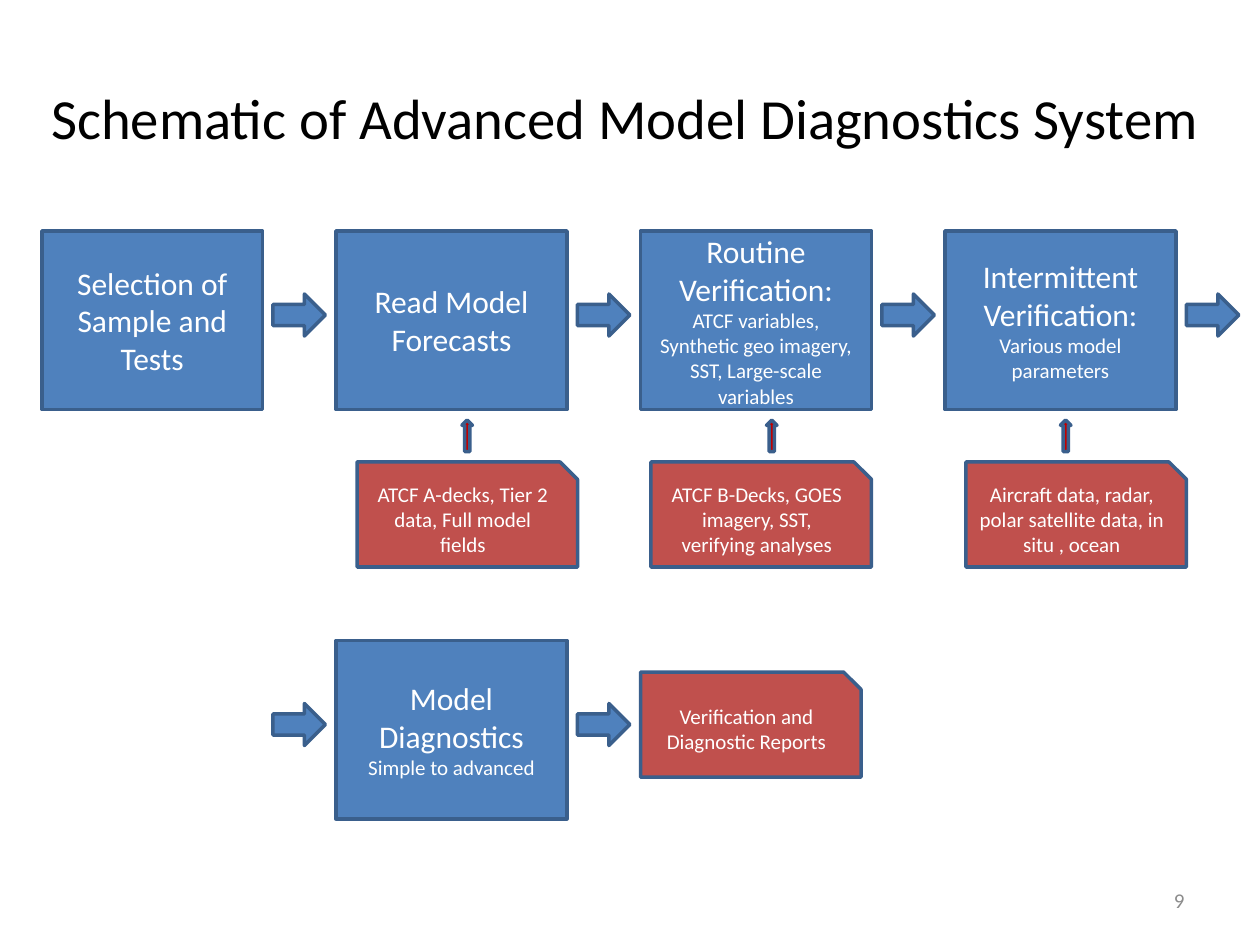
import pptx
import pptx.util
import pptx.dml.color
import pptx.enum.shapes
import pptx.enum.text

# Content: each block is a list of (text, point size) paragraphs
TITLE = "Schematic of Advanced Model Diagnostics System"
PAGE = "9"
START = [("Selection of Sample and Tests", 18)]
STEPS = [  # column, row, paragraphs
    (0, 0, [("Read Model Forecasts", 18)]),
    (1, 0, [("Routine Verification:", 18),
            ("ATCF variables, Synthetic geo imagery, SST, Large-scale variables", 12)]),
    (2, 0, [("Intermittent Verification:", 18), ("Various model parameters", 12)]),
    (0, 1, [("Model Diagnostics", 18), ("Simple to advanced", 12)]),
]
INPUTS = [  # card left, up arrow left, text
    (272, 352, "ATCF A-decks, Tier 2 data, Full model fields"),
    (496, 584, "ATCF B-Decks, GOES imagery, SST, verifying analyses"),
    (736, 808, "Aircraft data, radar, polar satellite data, in situ , ocean"),
]
REPORT = "Verification and Diagnostic Reports"
FLOWS = [(0, 0), (1, 0), (2, 0), (3, 0), (0, 1), (1, 1)]  # arrow column, row

# Layout in px, 96 to the inch
SCALE = 9525
LEFT, PITCH = 256, 232
TOPS = (176, 488)
WIDE, HIGH = 176, 136
CARD = (168, 80)
BLUE, RED, DARK, EDGE = "4F81BD", "C0504D", "C00000", "3A5F8C"
KIND = pptx.enum.shapes.MSO_SHAPE
ALIGN = pptx.enum.text.PP_ALIGN


def px(num):
    return pptx.util.Emu(num * SCALE)


def tint(code):
    return pptx.dml.color.RGBColor.from_string(code)


def style(item, form):
    for name, value in form.items():
        setattr(item, name, value)


def write(shape, paras, color="FFFFFF", align=ALIGN.CENTER):
    frame = shape.text_frame
    style(frame, {"word_wrap": True,
                  "vertical_anchor": pptx.enum.text.MSO_ANCHOR.MIDDLE})
    for i, (text, size) in enumerate(paras):
        para = frame.paragraphs[0] if i == 0 else frame.add_paragraph()
        para.alignment = align
        run = para.add_run()
        run.text = text
        style(run.font, {"name": "Calibri", "size": pptx.util.Pt(size)})
        run.font.color.rgb = tint(color)


def label(slide, box, text, size, color, align):
    shape = slide.shapes.add_textbox(*map(px, box))
    write(shape, [(text, size)], color, align)


def draw(slide, kind, box, fill, paras=()):
    shape = slide.shapes.add_shape(kind, *map(px, box))
    shape.shadow.inherit = False
    shape.fill.solid()
    shape.fill.fore_color.rgb = tint(fill)
    shape.line.color.rgb = tint(EDGE)
    shape.line.width = pptx.util.Pt(2)
    if paras:
        write(shape, paras)
    return shape


def main():
    deck = pptx.Presentation()
    style(deck, {"slide_width": px(960), "slide_height": px(720)})
    slide = deck.slides.add_slide(deck.slide_layouts[6])

    # Title and page number
    label(slide, (24, 29, 904, 120), TITLE, 32.4, "000000", ALIGN.CENTER)
    label(slide, (688, 667, 224, 38), PAGE, 12, "8C8C8C", ALIGN.RIGHT)

    # Process steps
    draw(slide, KIND.RECTANGLE, (32, TOPS[0], 168, HIGH), BLUE, START)
    for col, row, paras in STEPS:
        box = (LEFT + col * PITCH, TOPS[row], WIDE, HIGH)
        draw(slide, KIND.RECTANGLE, box, BLUE, paras)

    # Arrows between steps
    for col, row in FLOWS:
        box = (LEFT - 48 + col * PITCH, TOPS[row] + 48, 40, 32)
        draw(slide, KIND.RIGHT_ARROW, box, BLUE)

    # Data cards feeding the steps above
    for left, tip, text in INPUTS:
        draw(slide, KIND.SNIP_1_RECTANGLE, (left, 352, *CARD), RED, [(text, 12)])
        draw(slide, KIND.UP_ARROW, (tip, 320, 8, 24), DARK)

    # Final report
    box = (LEFT + PITCH, TOPS[1] + 24, *CARD)
    draw(slide, KIND.SNIP_1_RECTANGLE, box, RED, [(REPORT, 12)])

    deck.save("out.pptx")


if __name__ == "__main__":
    main()
